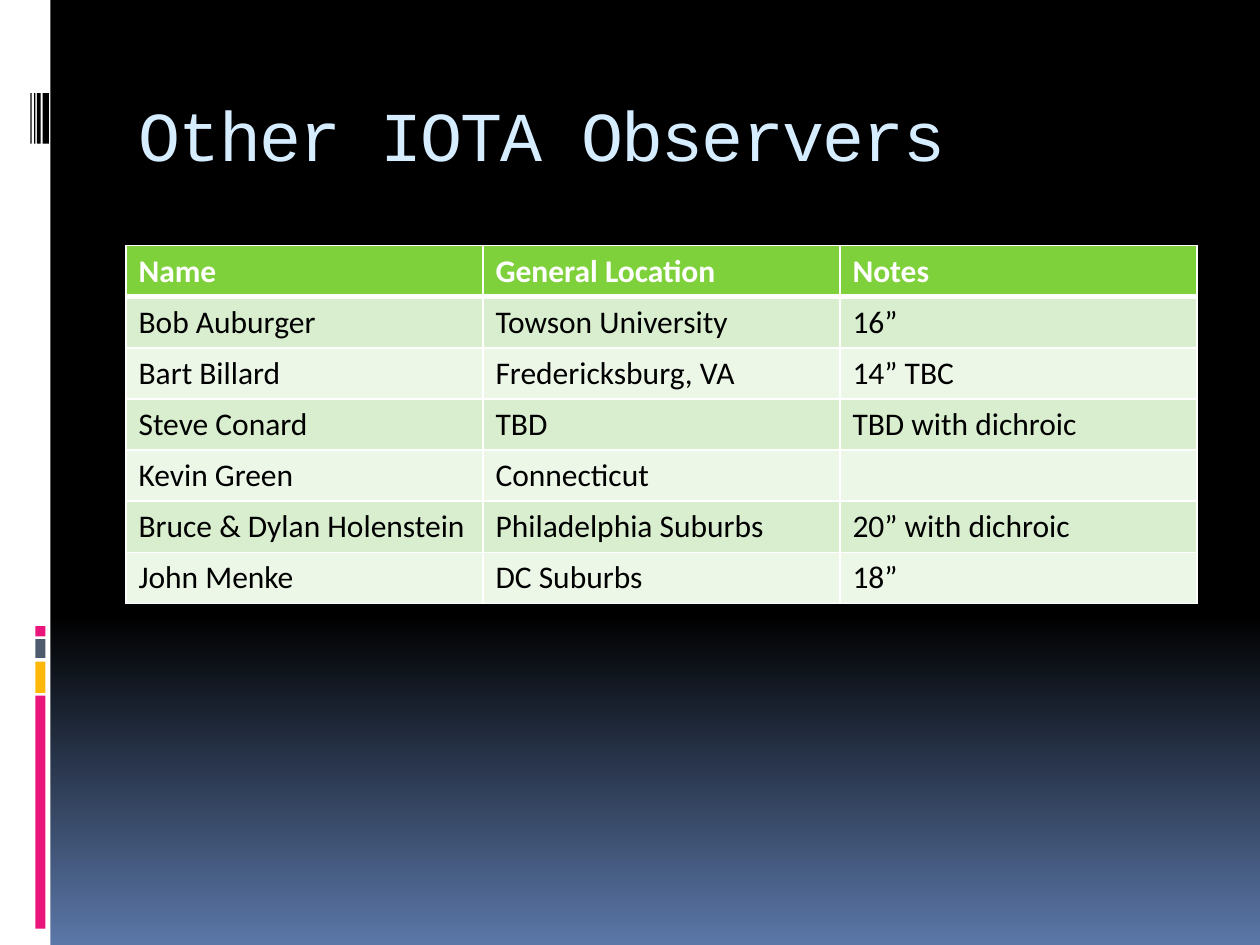
"""Build the slide listing the other IOTA observers."""
from copy import deepcopy

from lxml.etree import SubElement
from pptx import Presentation
from pptx.dml.color import RGBColor as RGB
from pptx.enum.shapes import MSO_SHAPE as SHAPE
from pptx.enum.text import MSO_ANCHOR as ANCHOR, PP_ALIGN as ALIGN
from pptx.oxml.ns import qn
from pptx.util import Pt

COLORS = {
    "black": "000000", "white": "FFFFFF", "blue": "5B77A8", "pink": "EA157A",
    "amber": "FEB80A", "slate": "4E5B6F", "title": "D6ECFF",
    "header": "7FD13B", "odd row": "D8EECE", "even row": "ECF7E8",
}


def color(name):
    return RGB.from_string(COLORS[name])


def add_border(cell, side, width):
    line = SubElement(cell._tc.get_or_add_tcPr(), qn(f"a:{side}"), w=str(Pt(width)))
    fill = SubElement(line, qn("a:solidFill"))
    SubElement(fill, qn("a:srgbClr"), val=COLORS["white"])


presentation = Presentation()
presentation.slide_width, presentation.slide_height = Pt(720), Pt(540)
slide = presentation.slides.add_slide(presentation.slide_layouts[5])

background = slide.background.fill
background.gradient()
background.gradient_angle = 270
first_stop = background.gradient_stops[0]._gs
first_stop.addnext(deepcopy(first_stop))
for stop, (position, name) in zip(
    background.gradient_stops, [(0, "black"), (0.65, "black"), (1, "blue")]
):
    stop.position = position
    stop.color.rgb = color(name)

bars = [(0, 0, 28.8, 540, "white")]
bars += [
    (20.16, top, 5.76, height, name)
    for top, height, name in [
        (397.5, 133.2, "pink"), (378, 18, "amber"),
        (365.2, 10.8, "slate"), (357.8, 5.8, "pink"),
    ]
]
bars += [
    (left, 53.3, width, 28.8, "black")
    for left, width in [(24.4, 3.6), (21.1, 2.2), (19.5, 0.7), (17.4, 0.7)]
]
for left, top, width, height, name in bars:
    bar = slide.shapes.add_shape(SHAPE.RECTANGLE, Pt(left), Pt(top), Pt(width), Pt(height))
    bar.shadow.inherit = False
    bar.fill.solid()
    bar.fill.fore_color.rgb = color(name)
    bar.line.fill.background()

title = slide.shapes.title
title.left, title.top, title.width, title.height = Pt(72), Pt(40.3), Pt(612), Pt(72)
title.text_frame.vertical_anchor = ANCHOR.MIDDLE
paragraph = title.text_frame.paragraphs[0]
paragraph.alignment = ALIGN.LEFT
run = paragraph.add_run()
run.text = "Other IOTA Observers"
run.font.name, run.font.size = "Courier New", Pt(40)
run.font.color.rgb = color("title")
run._r.get_or_add_rPr().set("spc", "-100")

observers = [
    ("Name", "General Location", "Notes"),
    ("Bob Auburger", "Towson University", "16”"),
    ("Bart Billard", "Fredericksburg, VA", "14” TBC"),
    ("Steve Conard", "TBD", "TBD with dichroic"),
    ("Kevin Green", "Connecticut", ""),
    ("Bruce & Dylan Holenstein", "Philadelphia Suburbs", "20” with dichroic"),
    ("John Menke", "DC Suburbs", "18”"),
]
table = slide.shapes.add_table(
    len(observers), 3, Pt(72), Pt(140.4), Pt(612), Pt(29.2 * len(observers))
).table
for row_index, values in enumerate(observers):
    is_header = row_index == 0
    row_fill = "header" if is_header else "odd row" if row_index % 2 else "even row"
    widths = {
        "lnL": 1, "lnR": 1,
        "lnT": 3 if row_index == 1 else 1,
        "lnB": 3 if is_header else 1,
    }
    for column_index, value in enumerate(values):
        cell = table.cell(row_index, column_index)
        for side, width in widths.items():
            add_border(cell, side, width)
        cell.fill.solid()
        cell.fill.fore_color.rgb = color(row_fill)
        paragraph = cell.text_frame.paragraphs[0]
        paragraph.font.size = Pt(18)
        if value:
            run = paragraph.add_run()
            run.text = value
            run.font.name, run.font.size, run.font.bold = "Calibri", Pt(18), is_header
            run.font.color.rgb = color("white" if is_header else "black")

presentation.save("out.pptx")
